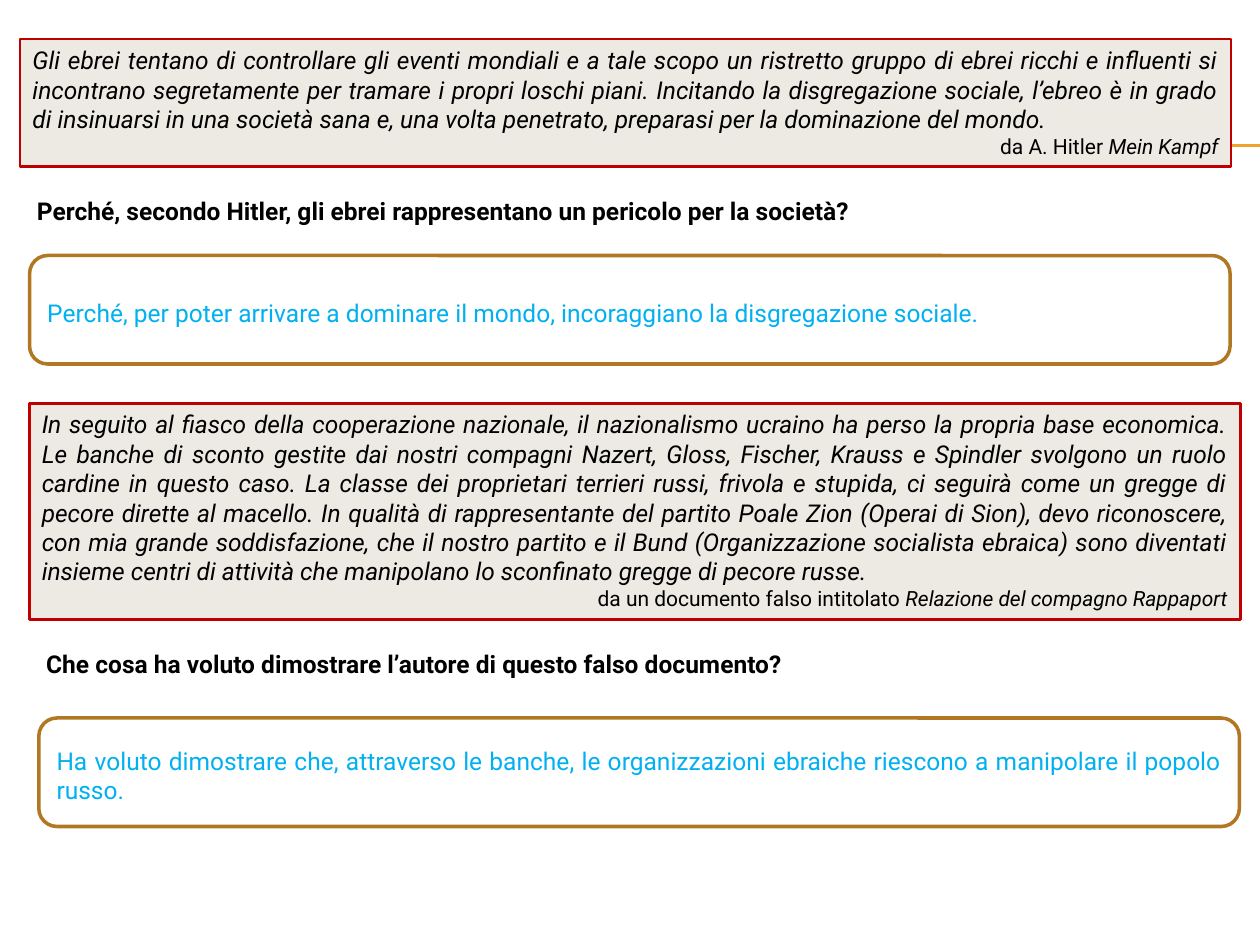
from lxml import etree
from pptx import Presentation
from pptx.dml.color import RGBColor
from pptx.enum.shapes import MSO_CONNECTOR, MSO_SHAPE
from pptx.enum.text import MSO_ANCHOR, PP_ALIGN
from pptx.oxml.ns import qn
from pptx.util import Pt

RECTANGLE = MSO_SHAPE.RECTANGLE
ROUNDED = MSO_SHAPE.ROUNDED_RECTANGLE
STRAIGHT = MSO_CONNECTOR.STRAIGHT
TOP, MIDDLE = MSO_ANCHOR.TOP, MSO_ANCHOR.MIDDLE
JUSTIFY, RIGHT = PP_ALIGN.JUSTIFY, PP_ALIGN.RIGHT

FONT = "Roboto"
COLORS = {
    "rule": "F0A22E",
    "quote fill": "ECEAE3",
    "quote line": "C00000",
    "answer fill": "FFFFFF",
    "answer line": "B17722",
    "text": "000000",
    "answer text": "00B0F0",
}

EXERCISES = [
    {
        "left": 11.5,
        "quote": "Gli ebrei tentano di controllare gli eventi mondiali e a tale scopo un "
                 "ristretto gruppo di ebrei ricchi e influenti si incontrano segretamente per "
                 "tramare i propri loschi piani. Incitando la disgregazione sociale, l’ebreo è "
                 "in grado di insinuarsi in una società sana e, una volta penetrato, preparasi "
                 "per la dominazione del mondo.",
        "source": ("da A. Hitler ", "Mein Kampf"),
        "question": "Perché, secondo Hitler, gli ebrei rappresentano un pericolo per la società?",
        "answer": "Perché, per poter arrivare a dominare il mondo, incoraggiano la "
                  "disgregazione sociale.",
        "quote top": 22.3, "quote height": 72.7, "question top": 92.5, "answer top": 146,
    },
    {
        "left": 16.8,
        "quote": "In seguito al fiasco della cooperazione nazionale, il nazionalismo ucraino ha "
                 "perso la propria base economica. Le banche di sconto gestite dai nostri "
                 "compagni Nazert, Gloss, Fischer, Krauss e Spindler svolgono un ruolo cardine "
                 "in questo caso. La classe dei proprietari terrieri russi, frivola e stupida, "
                 "ci seguirà come un gregge di pecore dirette al macello. In qualità di "
                 "rappresentante del partito Poale Zion (Operai di Sion), devo riconoscere, con "
                 "mia grande soddisfazione, che il nostro partito e il Bund (Organizzazione "
                 "socialista ebraica) sono diventati insieme centri di attività che manipolano "
                 "lo sconfinato gregge di pecore russe.",
        "source": ("da un documento falso intitolato ", "Relazione del compagno Rappaport"),
        "question": "Che cosa ha voluto dimostrare l’autore di questo falso documento?",
        "answer": "Ha voluto dimostrare che, attraverso le banche, le organizzazioni ebraiche "
                  "riescono a manipolare il popolo russo.",
        "quote top": 230.4, "quote height": 123.8, "question top": 351.4, "answer top": 410.3,
    },
]

SLIDE_WIDTH, SLIDE_HEIGHT = 720, 540
RULE_LEFT, RULE_TOPS = 40.3, (82.8, 83.5)
QUOTE_WIDTH = 692
ANSWER_WIDTH, ANSWER_HEIGHT, ANSWER_INDENT = 686, 62, 5.4
QUESTION_HEIGHT, QUESTION_INDENT = 56, 2.5


def color(name):
    return RGBColor.from_string(COLORS[name])


def set_frame(box, anchor, top_inset=3.6):
    frame = box.text_frame
    frame.word_wrap = True
    frame.vertical_anchor = anchor
    frame.margin_left = frame.margin_right = Pt(7.2)
    frame.margin_top, frame.margin_bottom = Pt(top_inset), Pt(3.6)
    return frame


def format_para(para, size, color_name, align=JUSTIFY):
    para.alignment = align
    para.font.name = FONT
    para.font.size = Pt(size)
    para.font.color.rgb = color(color_name)


def add_panel(slide, preset, place, style, line_width):
    box = slide.shapes.add_shape(preset, *map(Pt, place))
    box.shadow.inherit = False
    box.fill.solid()
    box.fill.fore_color.rgb = color(f"{style} fill")
    box.line.color.rgb = color(f"{style} line")
    box.line.width = Pt(line_width)
    return box


def add_rule(slide, top):
    rule = slide.shapes.add_connector(STRAIGHT, Pt(RULE_LEFT), Pt(top), Pt(SLIDE_WIDTH), Pt(top))
    rule.line.color.rgb = color("rule")
    rule.line.width = Pt(0.75)
    etree.SubElement(rule._element.spPr, qn("a:effectLst"))


def add_quote(slide, exercise):
    place = (exercise["left"], exercise["quote top"], QUOTE_WIDTH, exercise["quote height"])
    frame = set_frame(add_panel(slide, RECTANGLE, place, "quote", 1.5), TOP)
    para = frame.paragraphs[0]
    para.text = exercise["quote"]
    format_para(para, 14, "text")
    para.font.italic = True

    para = frame.add_paragraph()
    format_para(para, 12, "text", RIGHT)
    para.space_after = Pt(6)
    for text, italic in zip(exercise["source"], (False, True)):
        span = para.add_run()
        span.text = text
        span.font.italic = italic


def add_question(slide, exercise):
    place = (exercise["left"] + QUESTION_INDENT, exercise["question top"],
             ANSWER_WIDTH, QUESTION_HEIGHT)
    frame = set_frame(slide.shapes.add_textbox(*map(Pt, place)), MIDDLE)
    para = frame.paragraphs[0]
    para.text = exercise["question"]
    format_para(para, 14, "text")
    para.font.bold = True


def add_answer(slide, exercise):
    place = (exercise["left"] + ANSWER_INDENT, exercise["answer top"],
             ANSWER_WIDTH, ANSWER_HEIGHT)
    frame = set_frame(add_panel(slide, ROUNDED, place, "answer", 2), MIDDLE, 7.2)
    para = frame.paragraphs[0]
    para.text = exercise["answer"]
    format_para(para, 14, "answer text")


def main():
    deck = Presentation()
    deck.slide_width, deck.slide_height = Pt(SLIDE_WIDTH), Pt(SLIDE_HEIGHT)
    slide = deck.slides.add_slide(deck.slide_layouts[6])
    for top in RULE_TOPS:
        add_rule(slide, top)
    for exercise in EXERCISES:
        add_quote(slide, exercise)
        add_question(slide, exercise)
        add_answer(slide, exercise)
    deck.save("out.pptx")


if __name__ == "__main__":
    main()
